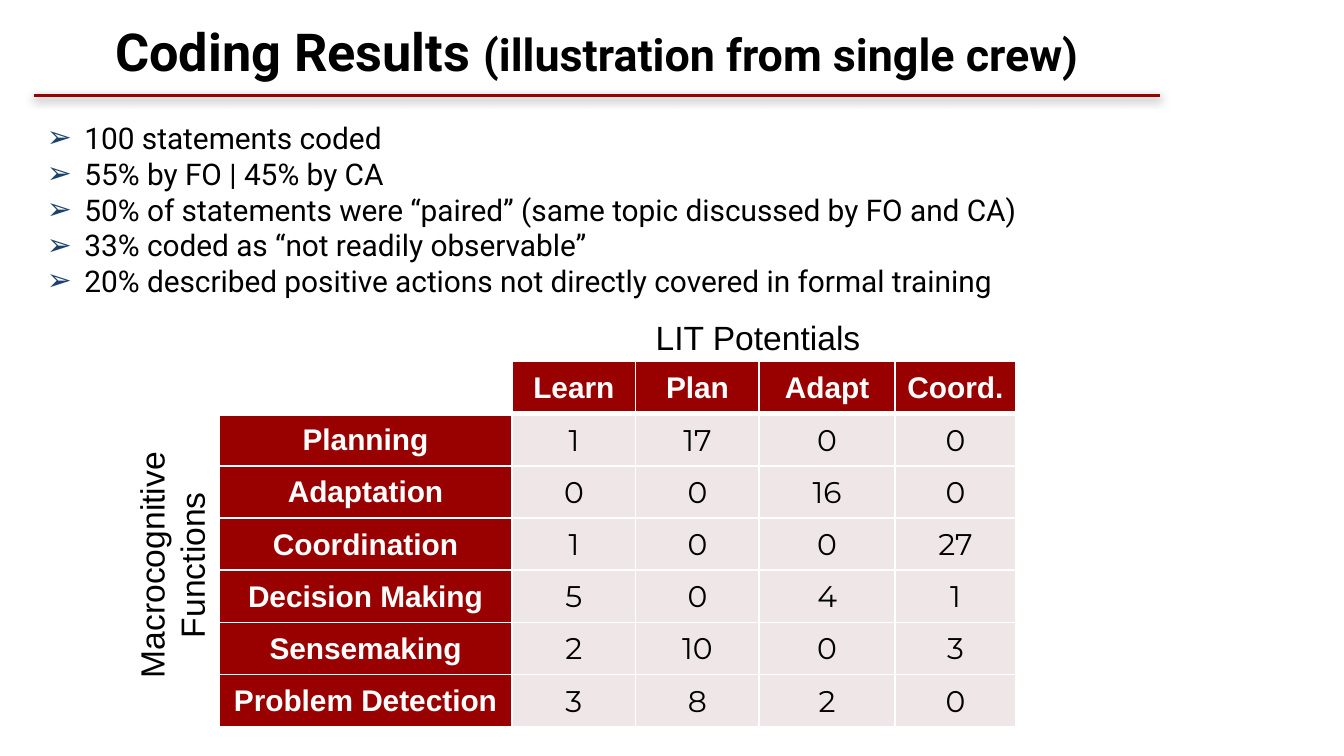
from pptx import Presentation, util as u
from pptx.dml.color import RGBColor
from pptx.enum import shapes, text
from pptx.oxml import parse_xml
from pptx.oxml.ns import nsdecls

HEX = {"red": "990000", "pale": "EFE7E7", "white": "FFFFFF",
       "black": "000000", "blue": "1B416C"}
TITLE = [("Coding Results ", 28), ("(illustration from single crew)", 24)]
POINTS = [
    "100 statements coded",
    "55% by FO | 45% by CA",
    "50% of statements were “paired” (same topic discussed by FO and CA)",
    "33% coded as “not readily observable”",
    "20% described positive actions not directly covered in formal training",
]
ROWS = [
    ("", "Learn", "Plan", "Adapt", "Coord."),
    ("Planning", 1, 17, 0, 0),
    ("Adaptation", 0, 0, 16, 0),
    ("Coordination", 1, 0, 0, 27),
    ("Decision Making", 5, 0, 4, 1),
    ("Sensemaking", 2, 10, 0, 3),
    ("Problem Detection", 3, 8, 2, 0),
]
WIDTHS = [2.18, 0.92, 0.92, 1.01, 0.9]
HIGH = 2.72
WIDE = 10
LEFT, MID = text.PP_ALIGN.LEFT, text.PP_ALIGN.CENTER


def rgb(key):
    return RGBColor.from_string(HEX[key])


def style(font, size, face, key="black", bold=False):
    font.size, font.name, font.bold = u.Pt(size), face, bold
    font.color.rgb = rgb(key)


def add_box(slide, place, wrap=True):
    box = slide.shapes.add_textbox(*map(u.Inches, place))
    box.text_frame.word_wrap = wrap
    return box


def add_bullet(para):
    prop = para._p.get_or_add_pPr()
    prop.set("marL", str(u.Inches(0.28)))
    prop.set("indent", str(-u.Inches(0.28)))
    for xml in (f'<a:buClr {nsdecls("a")}><a:srgbClr val="{HEX["blue"]}"/></a:buClr>',
                f'<a:buFont {nsdecls("a")} typeface="Arial"/>',
                f'<a:buChar {nsdecls("a")} char="➢"/>'):
        prop.append(parse_xml(xml))


def add_edges(cell, head):
    prop = cell._tc.get_or_add_tcPr()
    for i, side in enumerate("LRTB"):
        wide = 3 if head and side == "B" else 1
        prop.insert(i, parse_xml(
            f'<a:ln{side} {nsdecls("a")} w="{u.Pt(wide)}"><a:solidFill>'
            f'<a:srgbClr val="{HEX["white"]}"/></a:solidFill></a:ln{side}>'))


def add_rule(slide):
    rule = slide.shapes.add_connector(
        shapes.MSO_CONNECTOR.STRAIGHT, *map(u.Inches, (0.25, 0.71, 8.63, 0.71)))
    rule.line.color.rgb, rule.line.width = rgb("red"), u.Pt(2)
    rule._element.spPr.append(parse_xml(
        f'<a:effectLst {nsdecls("a")}><a:outerShdw blurRad="{u.Pt(5)}" '
        f'dist="{u.Pt(1.6)}" dir="5400000" rotWithShape="0">'
        f'<a:srgbClr val="{HEX["black"]}"><a:alpha val="38000"/></a:srgbClr>'
        '</a:outerShdw></a:effectLst>'))


def add_title(slide):
    frame = add_box(slide, (0.25, 0.08, 8.38, 0.51)).text_frame
    frame.margin_top = u.Inches(0.06)
    para = frame.paragraphs[0]
    para.alignment = MID
    for words, size in TITLE:
        run = para.add_run()
        run.text = words
        style(run.font, size, "Roboto", bold=True)


def add_points(slide):
    frame = add_box(slide, (0.25, 0.84, 8.74, 1.55)).text_frame
    frame.text = "\n".join(POINTS)
    for para in frame.paragraphs:
        add_bullet(para)
        style(para.runs[0].font, 16, "Roboto")


def add_grid(slide):
    place = (1.63, 2.69, sum(WIDTHS), HIGH)
    grid = slide.shapes.add_table(
        len(ROWS), len(WIDTHS), *map(u.Inches, place)).table
    grid.first_row = grid.horz_banding = False
    for col, wide in zip(grid.columns, WIDTHS):
        col.width = u.Inches(wide)
    for r, row in enumerate(ROWS):
        grid.rows[r].height = u.Inches(HIGH / len(ROWS))
        for c, value in enumerate(row):
            cell = grid.cell(r, c)
            label = r == 0 or c == 0
            cell.margin_left = cell.margin_right = cell.margin_top = u.Inches(0.01)
            cell.margin_bottom = 0
            cell.vertical_anchor = text.MSO_ANCHOR.MIDDLE
            cell.fill.solid()
            cell.fill.fore_color.rgb = rgb(
                "white" if value == "" else "red" if label else "pale")
            add_edges(cell, r == 0)
            para = cell.text_frame.paragraphs[0]
            para.text, para.alignment = str(value), MID
            for run in para.runs:
                style(run.font, 16, "Arial" if label else "Montserrat",
                      "white" if label else "black", label)


def add_label(slide, words, place, align, turn=0):
    box = add_box(slide, place, False)
    box.rotation = turn
    box.text_frame.text = words
    for para in box.text_frame.paragraphs:
        para.alignment = align
        style(para.runs[0].font, 18, "Arial")


def main():
    deck = Presentation()
    deck.slide_width, deck.slide_height = u.Inches(WIDE), u.Inches(WIDE * 9 / 16)
    slide = deck.slides.add_slide(deck.slide_layouts[6])
    add_rule(slide)
    add_points(slide)
    add_title(slide)
    add_grid(slide)
    add_label(slide, "LIT Potentials", (4.78, 2.31, 1.74, 0.4), LEFT)
    add_label(slide, "Macrocognitive\nFunctions", (0.33, 3.85, 1.9, 0.71), MID, 270)
    deck.save("out.pptx")


if __name__ == "__main__":
    main()
